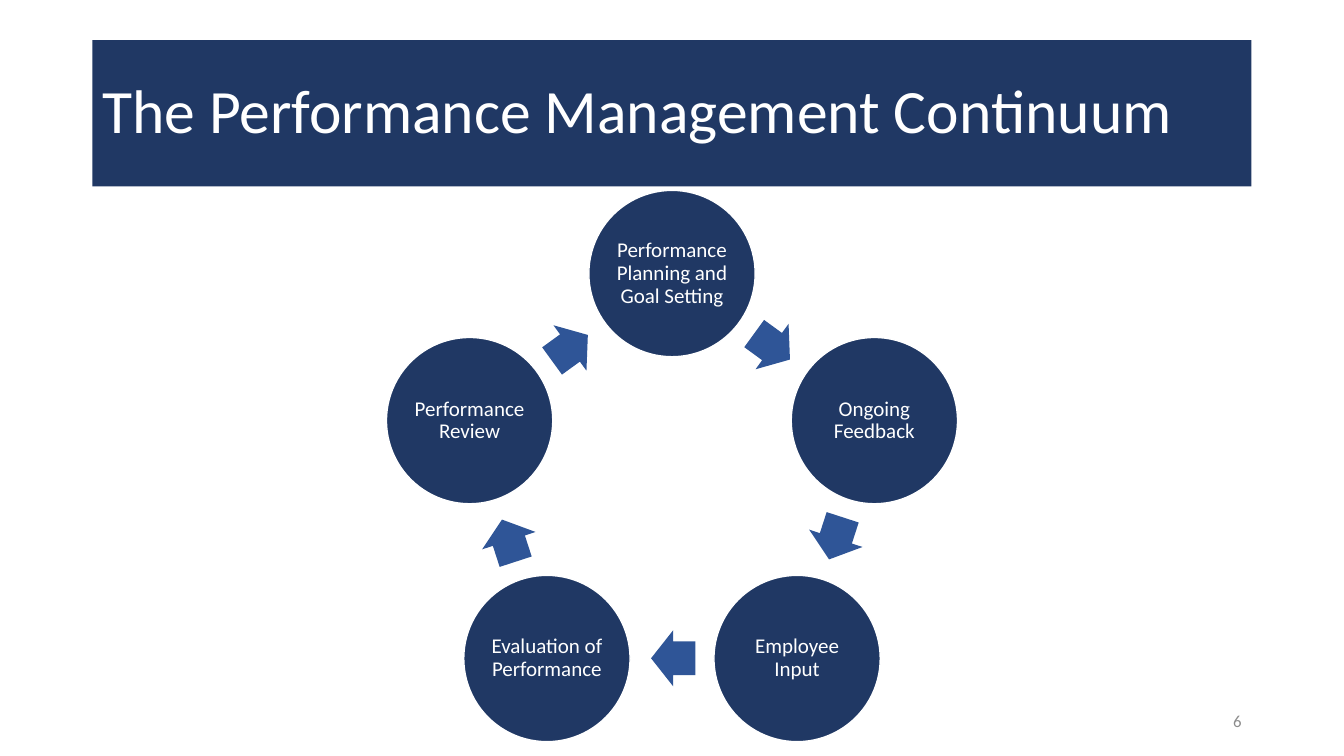
from math import cos, radians, sin

from pptx import Presentation
from pptx.dml.color import RGBColor
from pptx.enum.shapes import MSO_SHAPE as Shape
from pptx.enum.text import MSO_ANCHOR as Anchor, PP_ALIGN as Align
from pptx.util import Pt

COLORS = {"navy": "203864", "blue": "2F5597", "white": "FFFFFF", "gray": "8C8C8C"}
FONT = "Calibri"
STAGES = [
    "Performance Planning and Goal Setting",
    "Ongoing Feedback",
    "Employee Input",
    "Evaluation of Performance",
    "Performance Review",
]
CENTER_X, CENTER_Y = 480, 347.4
STAGE_RADIUS, ARROW_RADIUS = 152, 122.8
STAGE_SIZE = 118.8
ARROW_WIDTH, ARROW_HEIGHT = 31.6, 40.1
ARROW_LAG = 0.4


def color(name):
    return RGBColor.from_string(COLORS[name])


def write_text(shape, text, size, font_color="white", align=Align.LEFT,
               line_spacing=0.9, inset=None):
    frame = shape.text_frame
    frame.word_wrap = True
    frame.vertical_anchor = Anchor.MIDDLE
    if inset is not None:
        frame.margin_left = frame.margin_right = Pt(inset)
        frame.margin_top = frame.margin_bottom = Pt(inset)
    paragraph = frame.paragraphs[0]
    paragraph.alignment = align
    paragraph.line_spacing = line_spacing
    run = paragraph.add_run()
    run.text = text
    run.font.name = FONT
    run.font.size = Pt(size)
    run.font.color.rgb = color(font_color)


def add_filled(slide, kind, left, top, width, height, fill, outline=None):
    shape = slide.shapes.add_shape(kind, Pt(left), Pt(top), Pt(width), Pt(height))
    shape.shadow.inherit = False
    shape.fill.solid()
    shape.fill.fore_color.rgb = color(fill)
    if outline:
        shape.line.color.rgb = color(outline)
        shape.line.width = Pt(1)
    else:
        shape.line.fill.background()
    return shape


def add_on_ring(slide, kind, angle, radius, width, height, fill, outline=None):
    left = CENTER_X + radius * sin(radians(angle)) - width / 2
    top = CENTER_Y - radius * cos(radians(angle)) - height / 2
    return add_filled(slide, kind, left, top, width, height, fill, outline)


def add_stage(slide, text, angle):
    circle = add_on_ring(slide, Shape.OVAL, angle, STAGE_RADIUS,
                         STAGE_SIZE, STAGE_SIZE, "navy", "white")
    write_text(circle, text, 15, align=Align.CENTER, inset=1.5)


def add_arrow(slide, angle):
    arrow = add_on_ring(slide, Shape.RIGHT_ARROW, angle - ARROW_LAG, ARROW_RADIUS,
                        ARROW_WIDTH, ARROW_HEIGHT, "blue")
    arrow.adjustments[0] = 0.6
    arrow.adjustments[1] = 0.5
    arrow.rotation = angle


def main():
    presentation = Presentation()
    presentation.slide_width = Pt(960)
    presentation.slide_height = Pt(540)
    slide = presentation.slides.add_slide(presentation.slide_layouts[6])

    title = add_filled(slide, Shape.RECTANGLE, 66, 28.75, 828, 104.4, "navy")
    write_text(title, "The Performance Management Continuum", 44)

    number = slide.shapes.add_textbox(Pt(678), Pt(500.5), Pt(216), Pt(28.75))
    write_text(number, "6", 12, font_color="gray", align=Align.RIGHT, line_spacing=1.0)

    step = 360 / len(STAGES)
    for index, text in enumerate(STAGES):
        add_stage(slide, text, index * step)
        add_arrow(slide, (index + 0.5) * step)

    presentation.save("out.pptx")


if __name__ == "__main__":
    main()
